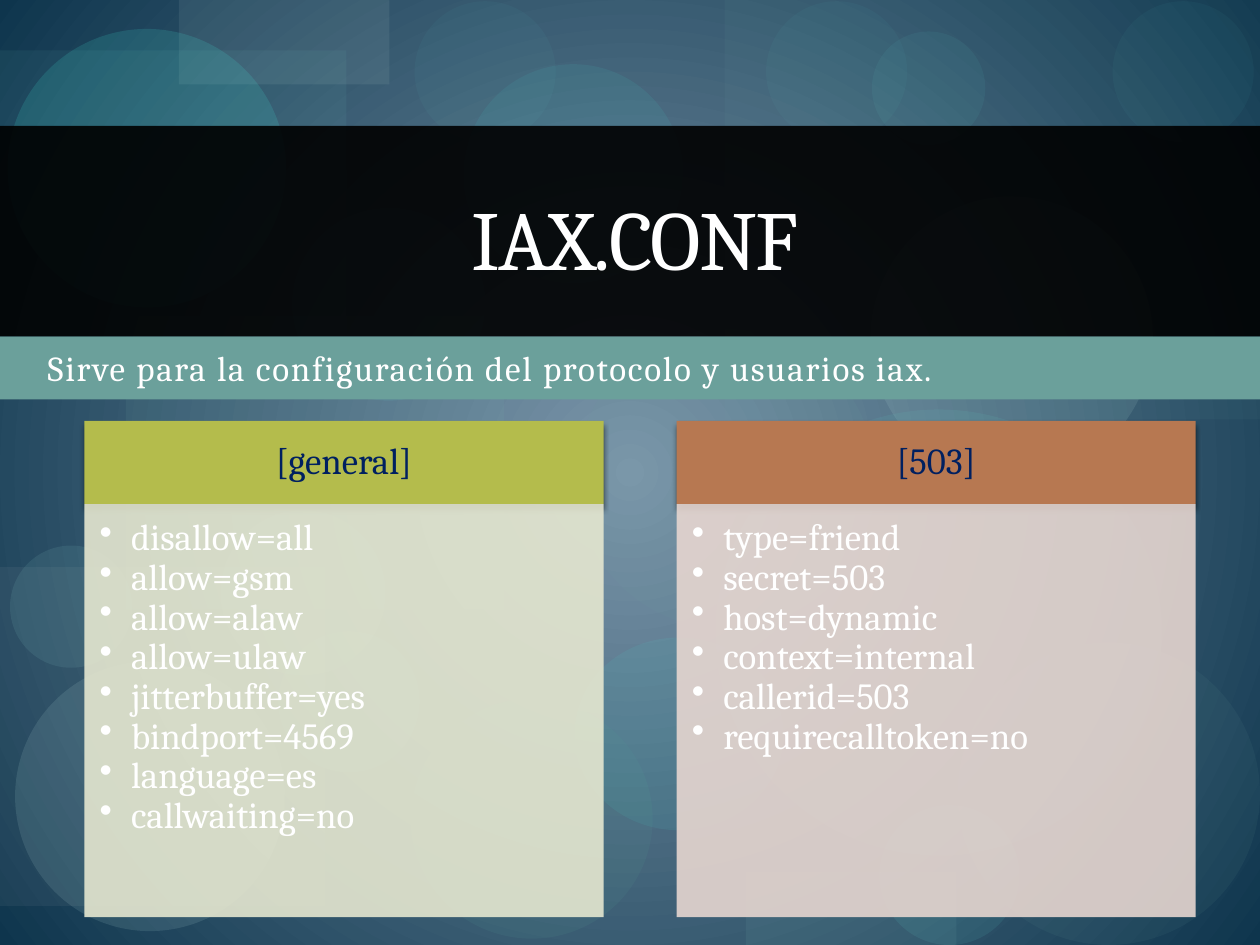
from lxml import etree
from pptx import Presentation
from pptx.dml.color import RGBColor
from pptx.enum.shapes import MSO_SHAPE as Shape
from pptx.enum.text import MSO_ANCHOR as Anchor, PP_ALIGN as Align
from pptx.oxml import parse_xml
from pptx.oxml.ns import nsdecls, qn
from pptx.util import Inches, Pt

color = RGBColor.from_string

presentation = Presentation()
presentation.slide_width, presentation.slide_height = Inches(10), Inches(7.5)
slide = presentation.slides.add_slide(presentation.slide_layouts[5])


def add_block(kind, box, fill, opacity=100):
    """Add a borderless shape, see-through if its opacity is below 100."""
    shape = slide.shapes.add_shape(kind, *map(Inches, box))
    shape.shadow.inherit = False
    shape.line.fill.background()
    shape.fill.solid()
    shape.fill.fore_color.rgb = color(fill)
    if opacity < 100:
        tint = shape.fill._xPr.find(".//" + qn("a:srgbClr"))
        etree.SubElement(tint, qn("a:alpha")).set("val", str(opacity * 1000))
    return shape


def write_text(shape, lines, size, fill="FFFFFF", align=Align.LEFT, anchor=Anchor.MIDDLE,
               margins=(0.1, 0.05, 0.1, 0.05), line_spacing=1.0, tracking=0, bullet=False):
    """Write one paragraph for each line, margins in order left, top, right, bottom."""
    frame = shape.text_frame
    frame.word_wrap = True
    frame.vertical_anchor = anchor
    (frame.margin_left, frame.margin_top,
     frame.margin_right, frame.margin_bottom) = map(Inches, margins)
    for number, line in enumerate(lines):
        paragraph = frame.add_paragraph() if number else frame.paragraphs[0]
        paragraph.alignment = align
        paragraph.line_spacing = line_spacing
        paragraph.space_before = paragraph.space_after = Pt(0)
        run = paragraph.add_run()
        run.text = line
        run.font.name = "Cambria"
        run.font.size = Pt(size)
        run.font.color.rgb = color(fill)
        if tracking:
            run.font._element.set("spc", str(tracking * 100))
        if bullet:
            properties = paragraph._p.get_or_add_pPr()
            properties.set("marL", str(Inches(0.25)))
            properties.set("indent", str(-Inches(0.25)))
            etree.SubElement(properties, qn("a:buChar")).set("char", "•")


# Background: radial gradient
slide.background.fill.gradient()
gradient = slide.background._cSld.find(".//" + qn("a:gradFill"))
gradient.getparent().replace(gradient, parse_xml(
    f'<a:gradFill {nsdecls("a")} rotWithShape="1"><a:gsLst>'
    '<a:gs pos="0"><a:srgbClr val="7B96AA"/></a:gs>'
    '<a:gs pos="100000"><a:srgbClr val="0E354D"/></a:gs></a:gsLst>'
    '<a:path path="circle"><a:fillToRect l="50000" t="50000" r="50000" b="50000"/></a:path>'
    '</a:gradFill>'))

# Faint circles and rectangles, back to front
decorations = [
    (Shape.RECTANGLE, (1, 2.51, 3, 2.33), "79B5B0", 9),
    (Shape.OVAL, (3.26, 5.55, 1.92, 1.9), "549791", 13),
    (Shape.RECTANGLE, (5.75, 0, 4.25, 3.33), "79B5B0", 6),
    (Shape.RECTANGLE, (0, 4.5, 2.58, 2.69), "B2B7BA", 8),
    (Shape.OVAL, (4.57, 2.61, 2.38, 2.38), "70A39E", 8),
    (Shape.OVAL, (6.98, 6.39, 1.11, 1.11), "65E8DC", 9),
    (Shape.OVAL, (6.91, 1.56, 2.24, 2.24), "C1E8E4", 11),
    (Shape.OVAL, (0.12, 5.25, 2.14, 2.14), "C1E8E4", 12),
    (Shape.OVAL, (2.21, 5.01, 1.12, 1.12), "65E8DC", 9),
    (Shape.OVAL, (4.56, 5.06, 1.66, 1.53), "44EADC", 8),
    (Shape.RECTANGLE, (0, 0.4, 2.75, 2.61), "77D6CE", 7),
    (Shape.RECTANGLE, (1.42, 0, 1.67, 0.67), "BED7D4", 10),
    (Shape.OVAL, (0.06, 0.23, 2.21, 2.21), "44EADC", 15),
    (Shape.OVAL, (0.08, 4.33, 0.97, 0.97), "97DCD6", 10),
    (Shape.OVAL, (2.32, 1.65, 1.53, 1.53), "65E8DC", 9),
    (Shape.OVAL, (3.68, 0.51, 1.74, 1.74), "44EADC", 8),
    (Shape.OVAL, (5.68, 3.25, 3.54, 3.54), "61CDC4", 10),
    (Shape.OVAL, (6.08, 0.01, 1.12, 1.12), "65E8DC", 4),
    (Shape.OVAL, (7.6, 5.1, 2.4, 2.4), "70A39E", 8),
    (Shape.OVAL, (1.75, 4.05, 1.31, 1.31), "97DCD6", 10),
    (Shape.OVAL, (6.92, 0.25, 0.9, 0.9), "65E8DC", 6),
    (Shape.OVAL, (8.83, 0.01, 1.12, 1.12), "65E8DC", 4),
    (Shape.RECTANGLE, (5.92, 6.92, 1.67, 0.58), "79B5B0", 10),
    (Shape.OVAL, (3.29, 0.01, 1.12, 1.12), "65E8DC", 4),
]
for decoration in decorations:
    add_block(*decoration)

# Bands behind the title and subtitle
add_block(Shape.RECTANGLE, (0, 2.67, 10, 0.5), "6BA09B")
add_block(Shape.RECTANGLE, (0, 1, 10, 1.67), "000000", 90)

# Subtitle and title, the title brought in front of its band
subtitle = slide.shapes.add_textbox(*map(Inches, (0.28, 2.71, 9.31, 0.42)))
write_text(subtitle, ["Sirve para la configuración del protocolo y usuarios iax."], 20,
           tracking=1)
title = slide.shapes.title
title.left, title.top, title.width, title.height = map(Inches, (0.5, 1.17, 9.08, 1.42))
write_text(title, ["IAX.CONF"], 48, align=Align.CENTER, tracking=-1)
slide.shapes._spTree.append(title._element)

# Two columns: a heading with a shadow over a bulleted list
columns = [
    (0.67, "[general]", "B4BC4C", "E5E7D0",
     ["disallow=all", "allow=gsm", "allow=alaw", "allow=ulaw", "jitterbuffer=yes",
      "bindport=4569", "language=es", "callwaiting=no"]),
    (5.37, "[503]", "B77851", "E6D6D0",
     ["type=friend", "secret=503", "host=dynamic", "context=internal", "callerid=503",
      "requirecalltoken=no"]),
]
for left, heading, heading_fill, list_fill, settings in columns:
    header = add_block(Shape.RECTANGLE, (left, 3.34, 4.12, 0.66), heading_fill)
    header._element.spPr.find(qn("a:effectLst")).append(parse_xml(
        f'<a:outerShdw {nsdecls("a")} blurRad="{Pt(3)}" dist="{Pt(3)}" dir="5400000" '
        'rotWithShape="0"><a:srgbClr val="000000"><a:alpha val="60000"/></a:srgbClr>'
        '</a:outerShdw>'))
    write_text(header, [heading], 21, "002060", Align.CENTER,
               margins=(0.16, 0.09, 0.16, 0.09), line_spacing=0.9)
    body = add_block(Shape.RECTANGLE, (left, 4, 4.12, 3.28), list_fill, 90)
    write_text(body, settings, 21, anchor=Anchor.TOP, margins=(0.12, 0.12, 0.16, 0.18),
               line_spacing=0.9, bullet=True)

presentation.save("out.pptx")
